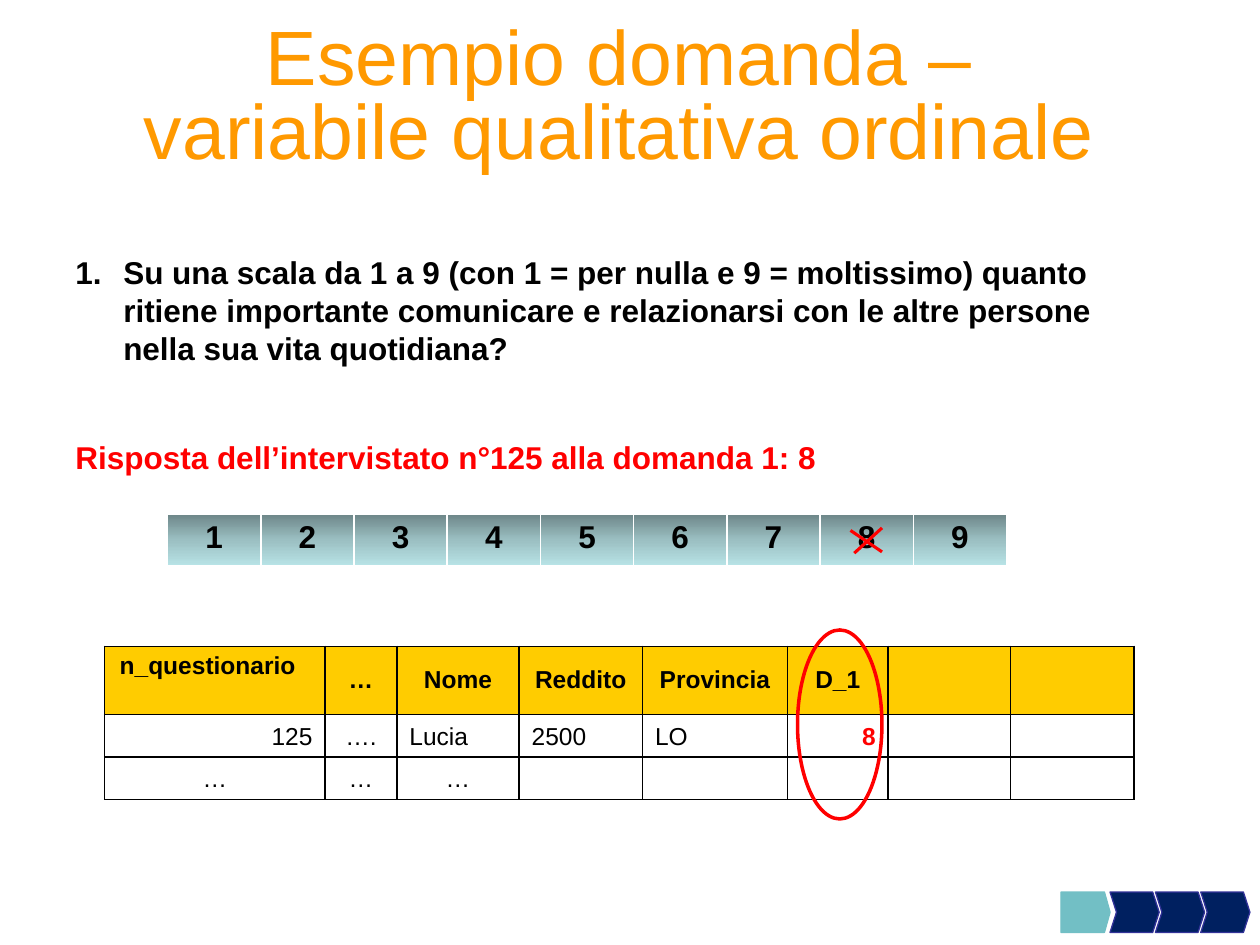
from lxml.etree import SubElement
from pptx import Presentation
from pptx.dml.color import RGBColor
from pptx.enum.shapes import MSO_CONNECTOR, MSO_SHAPE
from pptx.enum.text import MSO_ANCHOR, PP_ALIGN
from pptx.oxml.ns import qn
from pptx.util import Inches, Pt

LEFT, CENTER, RIGHT = PP_ALIGN.LEFT, PP_ALIGN.CENTER, PP_ALIGN.RIGHT
BLACK, WHITE, RED, GOLD = "000000", "FFFFFF", "FF0000", "FFCC00"
ORANGE, NAVY, INDIGO, TEAL = "FF9900", "002060", "333399", "72BFC5"
SCALE_STOPS = ((0, "6D8688"), (50, "9BBFC2"), (100, "B8E3E6"))


def color(value):
    return RGBColor.from_string(value)


class SlideBuilder:
    """Holds the style and the current slide, and adds each kind of element."""

    font = "Arial"

    def __init__(self, slide):
        self.slide = slide

    def style(self, paragraph, size, ink=BLACK, bold=False, align=LEFT):
        paragraph.alignment = align
        for run in paragraph.runs:
            run.font.name = self.font
            run.font.size = Pt(size)
            run.font.bold = bold
            run.font.color.rgb = color(ink)
        if not paragraph.runs:
            SubElement(paragraph._p, qn("a:endParaRPr"), sz=str(size * 100))

    def place(self, shape, left, top, width, height):
        shape.left, shape.top = Inches(left), Inches(top)
        shape.width, shape.height = Inches(width), Inches(height)

    def title(self, text, box):
        heading = self.slide.shapes.title
        self.place(heading, *box)
        heading.text_frame.text = text
        heading.text_frame.vertical_anchor = MSO_ANCHOR.MIDDLE
        paragraph = heading.text_frame.paragraphs[0]
        paragraph.line_spacing = 0.8
        self.style(paragraph, 44, ORANGE, align=CENTER)

    def question(self, question, answer, box):
        frame = self.slide.shapes.add_textbox(*map(Inches, box)).text_frame
        frame.word_wrap = True
        frame.text = question
        numbered = frame.paragraphs[0]
        properties = numbered._p.get_or_add_pPr()
        properties.set("marL", str(Inches(0.38)))
        properties.set("indent", str(Inches(-0.38)))
        SubElement(properties, qn("a:buFont"), typeface=self.font)
        SubElement(properties, qn("a:buAutoNum"), type="arabicPeriod")
        self.style(numbered, 18, bold=True)
        reply = frame.add_paragraph()
        reply.text = answer
        reply.space_before = Pt(41)
        self.style(reply, 18, RED, bold=True)

    def table(self, left, top, widths, heights):
        box = left, top, sum(widths), sum(heights)
        grid = self.slide.shapes.add_table(
            len(heights), len(widths), *map(Inches, box)).table
        grid.first_row = grid.horz_banding = False
        for column, width in zip(grid.columns, widths):
            column.width = Inches(width)
        for row, height in zip(grid.rows, heights):
            row.height = Inches(height)
        return grid

    def cell(self, cell, text, size, ink, bold, align, anchor, border):
        cell.text = text
        cell.vertical_anchor = anchor
        self.style(cell.text_frame.paragraphs[0], size, ink, bold, align)
        properties = cell._tc.get_or_add_tcPr()
        for side in ("lnL", "lnR", "lnT", "lnB"):
            edge = SubElement(properties, qn(f"a:{side}"), w=str(Pt(1)))
            SubElement(SubElement(edge, qn("a:solidFill")), qn("a:srgbClr"), val=border)

    def gradient(self, cell, stops):
        fill = SubElement(cell._tc.get_or_add_tcPr(), qn("a:gradFill"), rotWithShape="1")
        stop_list = SubElement(fill, qn("a:gsLst"))
        for percent, value in stops:
            stop = SubElement(stop_list, qn("a:gs"), pos=str(percent * 1000))
            SubElement(stop, qn("a:srgbClr"), val=value)
        SubElement(fill, qn("a:lin"), ang="5400000", scaled="1")

    def line(self, x1, y1, x2, y2):
        stroke = self.slide.shapes.add_connector(
            MSO_CONNECTOR.STRAIGHT, *map(Inches, (x1, y1, x2, y2)))
        stroke.line.color.rgb = color(RED)
        stroke.line.width = Pt(1.75)
        SubElement(stroke._element.spPr, qn("a:effectLst"))

    def shape(self, kind, box, outline, weight, fill=None, adjustment=None):
        shape = self.slide.shapes.add_shape(kind, *map(Inches, box))
        shape.shadow.inherit = False
        shape.line.color.rgb = color(outline)
        shape.line.width = Pt(weight)
        if fill:
            shape.fill.solid()
            shape.fill.fore_color.rgb = color(fill)
        else:
            shape.fill.background()
        if adjustment is not None:
            shape.adjustments[0] = adjustment


def add_answers(builder):
    widths = (1.75, 0.57, 0.97, 0.98, 1.15, 0.8, 0.97, 0.98)
    rows = (
        ("n_questionario", "…", "Nome", "Reddito", "Provincia", "D_1", "", ""),
        ("125", "….", "Lucia", "2500", "LO", "8", "", ""),
        ("…", "…", "…", "", "", "", "", ""),
    )
    record_aligns = (RIGHT, CENTER, LEFT, LEFT, LEFT, RIGHT, LEFT, LEFT)
    aligns = ((LEFT,) + (CENTER,) * 7, record_aligns, (CENTER,) * 8)
    answers = builder.table(0.83, 5.13, widths, (0.54, 0.33, 0.33))
    for r, row in enumerate(rows):
        for c, text in enumerate(row):
            header, chosen = r == 0, text == "8"
            cell = answers.cell(r, c)
            anchor = MSO_ANCHOR.MIDDLE if header else MSO_ANCHOR.BOTTOM
            builder.cell(cell, text, 14, RED if chosen else BLACK,
                         header or chosen, aligns[r][c], anchor, BLACK)
            cell.fill.solid()
            cell.fill.fore_color.rgb = color(GOLD if header else WHITE)
    first_header = answers.cell(0, 0)
    first_header.vertical_anchor = MSO_ANCHOR.TOP
    first_header.margin_left = Inches(0.12)


def add_scale(builder):
    scale = builder.table(1.33, 4.08, [0.74] * 9, [0.41])
    for index in range(9):
        cell = scale.cell(0, index)
        builder.cell(cell, str(index + 1), 18, BLACK, True, CENTER, MSO_ANCHOR.TOP, WHITE)
        builder.gradient(cell, SCALE_STOPS)


def main():
    deck = Presentation()
    deck.slide_width, deck.slide_height = Inches(10), Inches(7.5)
    builder = SlideBuilder(deck.slides.add_slide(deck.slide_layouts[5]))
    builder.title("Esempio domanda – \vvariabile qualitativa ordinale ", (0.5, 0.17, 9, 1.25))
    add_answers(builder)
    builder.question(
        "Su una scala da 1 a 9 (con 1 = per nulla e 9 = moltissimo) quanto ritiene "
        "importante comunicare e relazionarsi con le altre persone nella sua vita quotidiana?",
        "Risposta dell’intervistato n°125 alla domanda 1: 8",
        (0.5, 1.96, 8.75, 1.92))
    add_scale(builder)
    builder.line(6.75, 4.21, 7, 4.38)
    builder.line(6.78, 4.39, 7, 4.19)
    builder.shape(MSO_SHAPE.OVAL, (6.33, 5, 0.67, 1.5), RED, 2)
    builder.shape(MSO_SHAPE.PENTAGON, (8.42, 7.08, 0.39, 0.32), TEAL, 0.75, TEAL, 0.14)
    for step in range(3):
        builder.shape(MSO_SHAPE.CHEVRON, (8.81 + 0.36 * step, 7.08, 0.39, 0.32),
                      INDIGO, 0.75, NAVY, 0.16)
    deck.save("out.pptx")


if __name__ == "__main__":
    main()
